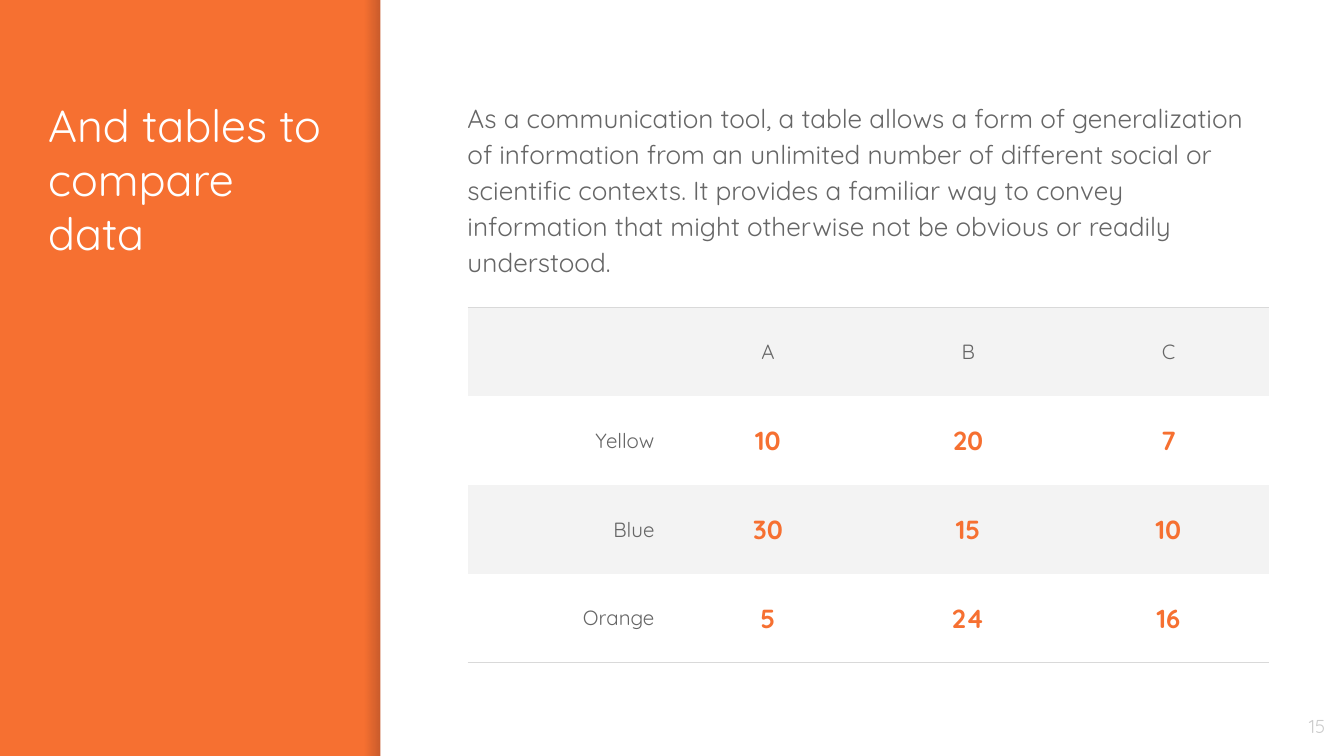
from dataclasses import dataclass

from lxml import etree
from pptx import Presentation
from pptx.dml.color import RGBColor
from pptx.enum.shapes import MSO_SHAPE
from pptx.enum.text import MSO_ANCHOR, PP_ALIGN
from pptx.oxml.ns import qn
from pptx.util import Inches, Pt

RECTANGLE = MSO_SHAPE.RECTANGLE
TOP, MIDDLE = MSO_ANCHOR.TOP, MSO_ANCHOR.MIDDLE
LEFT, CENTER, RIGHT = PP_ALIGN.LEFT, PP_ALIGN.CENTER, PP_ALIGN.RIGHT


@dataclass(frozen=True)
class Theme:
    font: str = "Quicksand"
    accent: str = "F67031"
    white: str = "FFFFFF"
    text: str = "666666"
    muted: str = "CCCCCC"
    band: str = "F3F3F3"
    rule: str = "D9D9D9"
    shade: str = "000014"
    title_size: int = 24
    body_size: int = 14
    label_size: int = 11
    number_size: int = 10
    rule_width: float = 0.75


THEME = Theme()
WIDTH = 10
HEIGHT = WIDTH * 9 / 16
PANEL_LEFT = 2.83
SHADE_WIDTH = 0.12
TABLE_LEFT, TABLE_TOP = 3.48, 2.29
COLUMN_WIDTH, ROW_HEIGHT = 1.49, 0.66

TITLE = "And tables to compare data"
BODY = (
    "As a communication tool, a table allows a form of generalization of "
    "information from an unlimited number of different social or scientific "
    "contexts. It provides a familiar way to convey information that might "
    "otherwise not be obvious or readily understood."
)
ROWS = [
    ["", "A", "B", "C"],
    ["Yellow", "10", "20", "7"],
    ["Blue", "30", "15", "10"],
    ["Orange", "5", "24", "16"],
]


def color(value):
    return RGBColor.from_string(value)


def write_text(frame, text, size, fill, align=LEFT, bold=False,
               line_spacing=None, space_before=None):
    para = frame.paragraphs[0]
    para.alignment = align
    if line_spacing:
        para.line_spacing = line_spacing
    if space_before:
        para.space_before = Pt(space_before)
    span = para.add_run()
    span.text = text
    span.font.name = THEME.font
    span.font.size = Pt(size)
    span.font.bold = bold
    span.font.color.rgb = color(fill)


def add_text(page, text, left, top, width, height, anchor=TOP, **style):
    box = page.shapes.add_textbox(
        Inches(left), Inches(top), Inches(width), Inches(height))
    frame = box.text_frame
    frame.word_wrap = True
    frame.vertical_anchor = anchor
    frame.margin_left = frame.margin_right = Inches(0.1)
    frame.margin_top = frame.margin_bottom = Inches(0.1)
    write_text(frame, text, **style)


def add_panel(page, left, width):
    panel = page.shapes.add_shape(
        RECTANGLE, Inches(left), 0, Inches(width), Inches(HEIGHT))
    panel.shadow.inherit = False
    panel.line.fill.background()
    panel.fill.solid()
    panel.fill.fore_color.rgb = color(THEME.white)
    return panel


def add_shade(page):
    shade = add_panel(page, PANEL_LEFT - SHADE_WIDTH, SHADE_WIDTH)
    shade.fill.gradient()
    shade.fill.gradient_angle = 0
    for stop in shade.fill.gradient_stops:
        stop.color.rgb = color(THEME.shade)
    tints = shade._element.spPr.iter(qn("a:srgbClr"))
    for tint, alpha in zip(tints, (0, 20000)):
        etree.SubElement(tint, qn("a:alpha"), val=str(alpha))


def set_borders(cell, ruled_sides):
    properties = cell._tc.get_or_add_tcPr()
    for index, side in enumerate(("L", "R", "T", "B")):
        line = etree.Element(qn(f"a:ln{side}"), w=str(Pt(THEME.rule_width)))
        if side in ruled_sides:
            fill = etree.SubElement(line, qn("a:solidFill"))
            etree.SubElement(fill, qn("a:srgbClr"), val=THEME.rule)
        else:
            etree.SubElement(line, qn("a:noFill"))
        properties.insert(index, line)


def format_cell(cell, text, row, column):
    cell.vertical_anchor = MIDDLE
    cell.margin_left = cell.margin_right = Inches(0.1)
    cell.margin_top = cell.margin_bottom = Inches(0.07)
    if row % 2 == 0:
        cell.fill.solid()
        cell.fill.fore_color.rgb = color(THEME.band)
    else:
        cell.fill.background()
    set_borders(cell, {0: "T", len(ROWS) - 1: "B"}.get(row, ""))
    if not text:
        return
    is_value = row > 0 and column > 0
    write_text(
        cell.text_frame, text,
        size=THEME.body_size if is_value else THEME.label_size,
        fill=THEME.accent if is_value else THEME.text,
        align=CENTER if column else RIGHT,
        bold=is_value)


def add_data_table(page):
    row_count, column_count = len(ROWS), len(ROWS[0])
    table = page.shapes.add_table(
        row_count, column_count, Inches(TABLE_LEFT), Inches(TABLE_TOP),
        Inches(COLUMN_WIDTH * column_count),
        Inches(ROW_HEIGHT * row_count)).table
    table.first_row = False
    table.horz_banding = False
    for column in table.columns:
        column.width = Inches(COLUMN_WIDTH)
    for row, values in enumerate(ROWS):
        table.rows[row].height = Inches(ROW_HEIGHT)
        for column, text in enumerate(values):
            format_cell(table.cell(row, column), text, row, column)


def main():
    deck = Presentation()
    deck.slide_width, deck.slide_height = Inches(WIDTH), Inches(HEIGHT)
    page = deck.slides.add_slide(deck.slide_layouts[6])
    page.background.fill.solid()
    page.background.fill.fore_color.rgb = color(THEME.accent)
    add_shade(page)
    add_panel(page, PANEL_LEFT, WIDTH - PANEL_LEFT)
    add_text(page, TITLE, 0.26, 0.63, 2.24, 4.35,
             size=THEME.title_size, fill=THEME.white)
    add_data_table(page)
    add_text(page, "15", 9.36, 5.19, 0.6, 0.43, anchor=MIDDLE,
             size=THEME.number_size, fill=THEME.muted, align=RIGHT)
    add_text(page, BODY, 3.38, 0.63, 6.12, 1.16, size=THEME.body_size,
             fill=THEME.text, line_spacing=1.15, space_before=6)
    deck.save("out.pptx")


if __name__ == "__main__":
    main()
